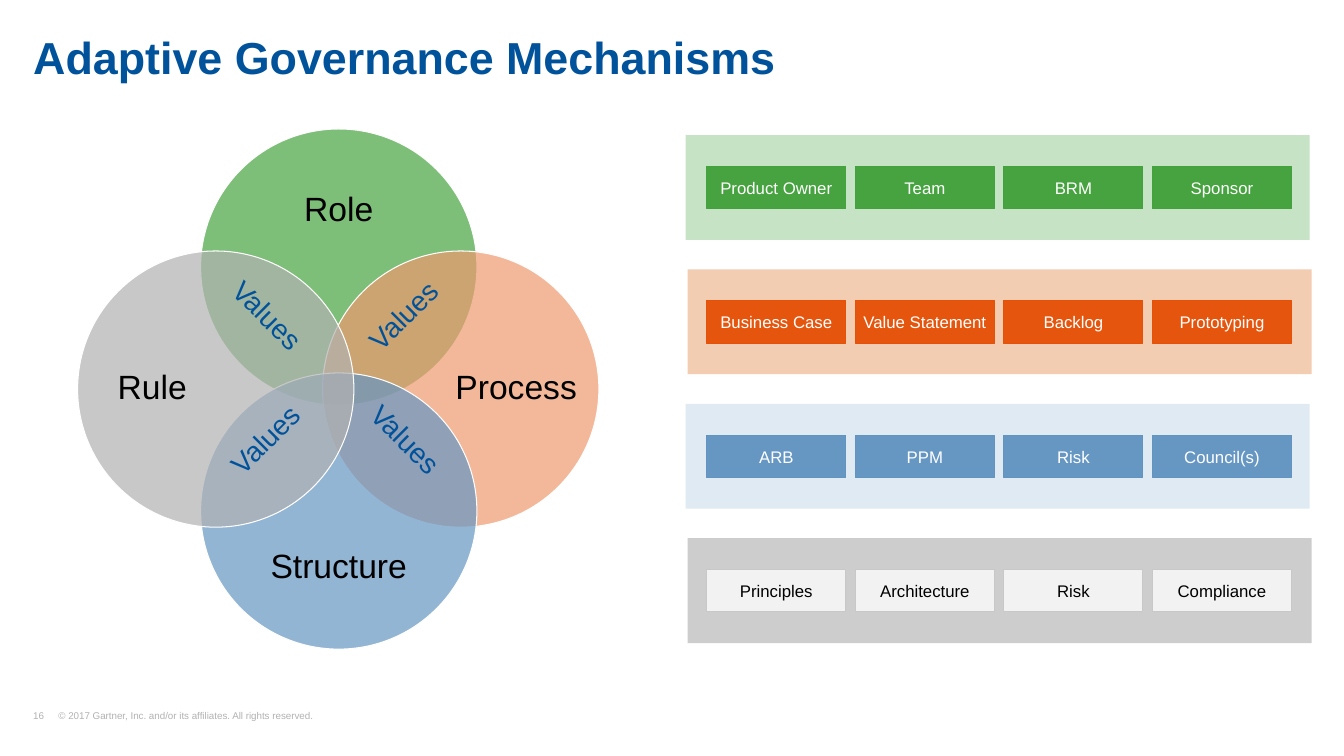
import pptx
import pptx.util
import pptx.dml.color
import pptx.enum.shapes
import pptx.enum.text
import pptx.oxml.ns
import lxml.etree

Inches = pptx.util.Inches
Pt = pptx.util.Pt
RGB = pptx.dml.color.RGBColor.from_string
Kind = pptx.enum.shapes.MSO_SHAPE
Align = pptx.enum.text.PP_ALIGN
Anchor = pptx.enum.text.MSO_ANCHOR
qn = pptx.oxml.ns.qn

hues = {
    "navy": "00529B", "white": "FFFFFF", "black": "000000", "gray": "B2B2B2",
    "green": "46A33F", "leaf": "42A23B", "mint": "C7E3C5",
    "orange": "E5550D", "rust": "E55107", "peach": "F3CDB2", "salmon": "EF996E",
    "blue": "6697C3", "steel": "6194C1", "ice": "E0EAF3",
    "pale": "F2F2F2", "silver": "C8C8C8", "ash": "CDCDCD",
}


def draw(kind, left, top, width, height, fill, line=None):
    shape = slide.shapes.add_shape(kind, Inches(left), Inches(top), Inches(width), Inches(height))
    shape.shadow.inherit = False
    shape.fill.solid()
    shape.fill.fore_color.rgb = RGB(hues[fill])
    if line:
        shape.line.color.rgb = RGB(hues[line])
        shape.line.width = Pt(0.75)
    else:
        shape.line.fill.background()
    return shape


def write(shape, text, size, hue, inset=(0, 0, 0, 0), align=Align.CENTER,
          anchor=Anchor.MIDDLE, wrap=False, space=0.9):
    frame = shape.text_frame
    frame.word_wrap = wrap
    frame.vertical_anchor = anchor
    frame.margin_left, frame.margin_top, frame.margin_right, frame.margin_bottom = map(Inches, inset)
    para = frame.paragraphs[0]
    para.alignment = align
    para.line_spacing = space
    run = para.add_run()
    run.text = text
    run.font.name = "Arial"
    run.font.size = Pt(size)
    run.font.color.rgb = RGB(hues[hue])
    return para


deck = pptx.Presentation()
deck.slide_width = Inches(13.33)
deck.slide_height = Inches(7.5)
slide = deck.slides.add_slide(deck.slide_layouts[6])

foot = slide.shapes.add_textbox(Inches(0.33), Inches(7.05), Inches(3.23), Inches(0.11))
para = write(foot, "16\t© 2017 Gartner, Inc. and/or its affiliates. All rights reserved.",
             7, "gray", align=Align.LEFT, anchor=Anchor.BOTTOM)
tabs = lxml.etree.SubElement(para._p.get_or_add_pPr(), qn("a:tabLst"))
lxml.etree.SubElement(tabs, qn("a:tab"), pos=str(Inches(0.25)), algn="l")

title = slide.shapes.add_textbox(Inches(0.33), Inches(0.25), Inches(12.66), Inches(0.59))
para = write(title, "Adaptive Governance Mechanisms", 32, "navy", (0, 0.1, 0, 0),
             Align.LEFT, Anchor.TOP, True)
para.runs[0].font.bold = True

circles = [
    ("Role", 1.99, 1.28, "green", 70, (0, 0, 0, 1.13)),
    ("Process", 3.2, 2.49, "salmon", 69, (1.1, 0, 0, 0)),
    ("Structure", 1.99, 3.7, "blue", 70, (0, 1.13, 0, 0)),
    ("Rule", 0.77, 2.49, "gray", 70, (0, 0, 1.26, 0)),
]
for name, left, top, hue, alpha, inset in circles:
    disc = draw(Kind.OVAL, left, top, 2.74, 2.74, hue, "white")
    tint = disc._element.spPr.find(qn("a:solidFill")).find(qn("a:srgbClr"))
    lxml.etree.SubElement(tint, qn("a:alpha"), val=str(alpha * 1000))
    write(disc, name, 24, "black", inset)

for left, top, turn in [(3.49, 4.17, 45), (2.12, 2.94, 45), (2.12, 4.17, 315), (3.49, 2.94, 315)]:
    value = slide.shapes.add_textbox(Inches(left), Inches(top), Inches(1.04), Inches(0.4))
    value.rotation = turn
    write(value, "Values", 20, "navy", (0.1, 0.05, 0.1, 0.05), anchor=Anchor.TOP)

bands = [
    ("mint", "green", "leaf", "white", ["Product Owner", "Team", "BRM", "Sponsor"]),
    ("peach", "orange", "rust", "white",
     ["Business Case", "Value Statement", "Backlog", "Prototyping"]),
    ("ice", "blue", "steel", "white", ["ARB", "PPM", "Risk", "Council(s)"]),
    ("ash", "pale", "silver", "black", ["Principles", "Architecture", "Risk", "Compliance"]),
]
for row, (back, fill, line, ink, names) in enumerate(bands):
    drop = row * 4 / 3
    draw(Kind.RECTANGLE, 6.8 + row % 2 * 0.02, 1.34 + drop, 6.19, 1.04, back)
    for col, name in enumerate(names):
        box = draw(Kind.RECTANGLE, 7.01 + col * 4.42 / 3, 1.65 + drop, 1.38, 0.42, fill, line)
        write(box, name, 12, ink, space=1.0)

deck.save("out.pptx")
